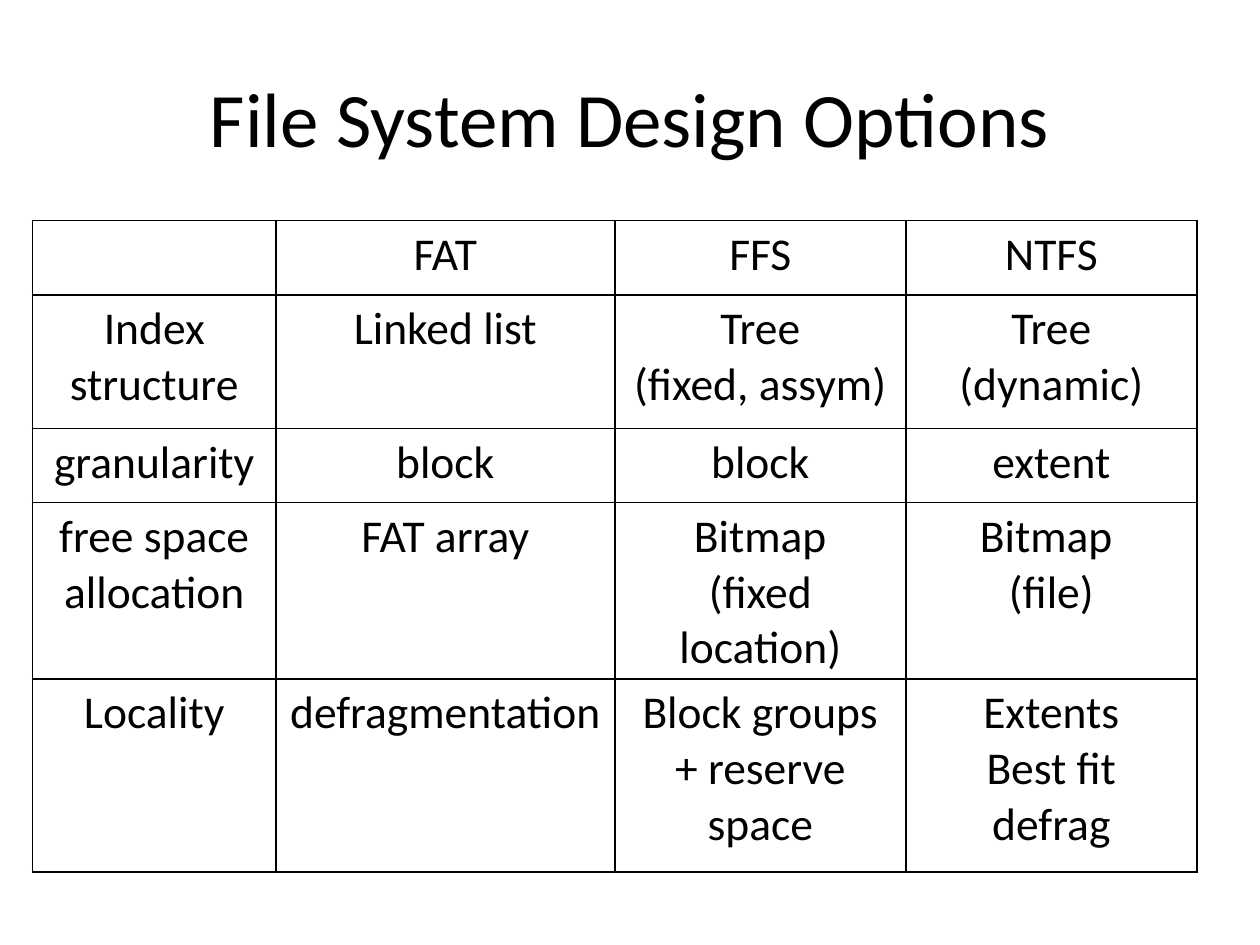
from dataclasses import dataclass

import pptx
import pptx.dml.color
import pptx.enum.text
import pptx.oxml
import pptx.oxml.ns
import pptx.util
from pptx.util import Inches

COLOURS = {"ink": "000000", "paper": "FFFFFF"}
FONT = "Calibri"
BODY_SIZE = 26
BORDER_WIDTH = 1
COLUMN_WIDTHS = (1.93, 2.69, 2.31, 2.31)


@dataclass(frozen=True)
class DesignRow:
    height: float
    entries: tuple[str, ...]


ROWS = (
    DesignRow(0.59, ("", "FAT", "FFS", "NTFS")),
    DesignRow(1.06, ("Index structure", "Linked list", "Tree\n(fixed, assym)", "Tree\n(dynamic)")),
    DesignRow(0.59, ("granularity", "block", "block", "extent")),
    DesignRow(1.06, ("free space\nallocation", "FAT array", "Bitmap\n(fixed location)", "Bitmap \n(file)")),
    DesignRow(1.53, ("Locality", "defragmentation", "Block groups + reserve space", "Extents\nBest fit\ndefrag")),
)


def colour(name: str) -> pptx.dml.color.RGBColor:
    return pptx.dml.color.RGBColor.from_string(COLOURS[name])


def write_text(frame, text: str, size: int) -> None:
    frame.word_wrap = True
    for index, line in enumerate(text.split("\n")):
        para = frame.add_paragraph() if index else frame.paragraphs[0]
        para.alignment = pptx.enum.text.PP_ALIGN.CENTER
        if line:
            span = para.add_run()
            span.text = line
            span.font.name = FONT
            span.font.size = pptx.util.Pt(size)
            span.font.color.rgb = colour("ink")


def draw_borders(cell) -> None:
    properties = cell._tc.get_or_add_tcPr()
    for position, side in enumerate(("lnL", "lnR", "lnT", "lnB")):
        border = pptx.oxml.parse_xml(
            f'<a:{side} {pptx.oxml.ns.nsdecls("a")} w="{pptx.util.Pt(BORDER_WIDTH)}">'
            f'<a:solidFill><a:srgbClr val="{COLOURS["ink"]}"/></a:solidFill></a:{side}>'
        )
        properties.insert(position, border)


def add_title(page, text: str) -> None:
    box = page.shapes.add_textbox(Inches(0.5), Inches(0.3), Inches(9), Inches(1.25))
    box.text_frame.vertical_anchor = pptx.enum.text.MSO_ANCHOR.MIDDLE
    write_text(box.text_frame, text, 44)


def add_design_table(page, rows: tuple[DesignRow, ...]) -> None:
    holder = page.shapes.add_table(
        len(rows), len(COLUMN_WIDTHS), Inches(0.26), Inches(1.75),
        Inches(sum(COLUMN_WIDTHS)), Inches(sum(row.height for row in rows)),
    )
    table = holder.table
    table.first_row = False
    table.horz_banding = False
    for column, width in zip(table.columns, COLUMN_WIDTHS):
        column.width = Inches(width)
    for table_row, row in zip(table.rows, rows):
        table_row.height = Inches(row.height)
        for cell, entry in zip(table_row.cells, row.entries):
            write_text(cell.text_frame, entry, BODY_SIZE)
            cell.fill.background()
            draw_borders(cell)


def main() -> None:
    deck = pptx.Presentation()
    deck.slide_width = Inches(10)
    deck.slide_height = Inches(7.5)
    page = deck.slides.add_slide(deck.slide_layouts[6])
    page.background.fill.solid()
    page.background.fill.fore_color.rgb = colour("paper")
    add_title(page, "File System Design Options")
    add_design_table(page, ROWS)
    deck.save("out.pptx")


if __name__ == "__main__":
    main()
